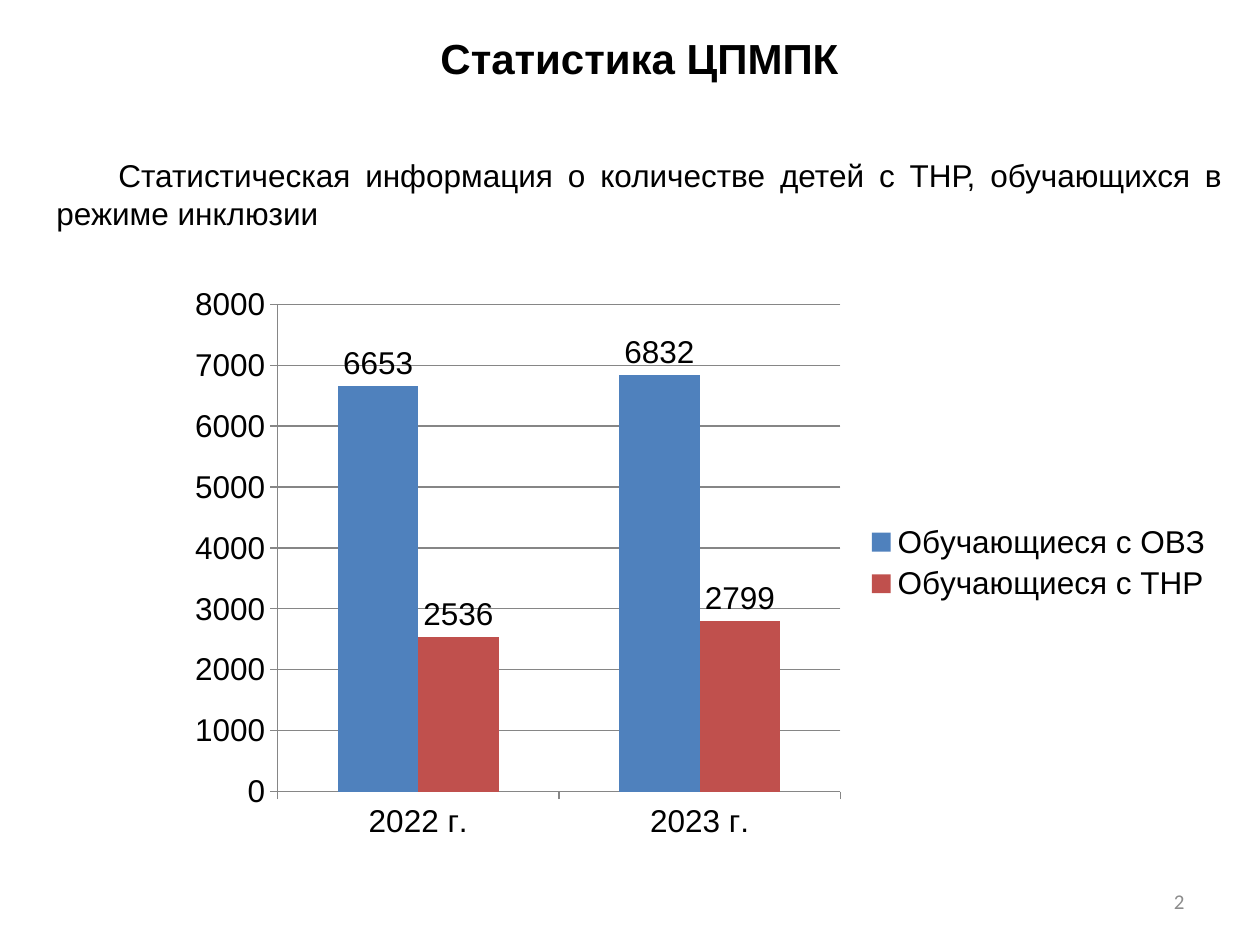
"""Build the slide with inclusion statistics and a clustered column chart."""
from pptx import Presentation
from pptx.chart.data import CategoryChartData
from pptx.dml.color import RGBColor
from pptx.enum.chart import XL_CHART_TYPE, XL_LABEL_POSITION, XL_LEGEND_POSITION, XL_TICK_MARK
from pptx.enum.text import MSO_ANCHOR, PP_ALIGN
from pptx.util import Emu, Pt

PX = 914400 // 126
BLACK = RGBColor(0x00, 0x00, 0x00)
GRAY = RGBColor(0x8C, 0x8C, 0x8C)
LINE_GRAY = RGBColor(0x86, 0x86, 0x86)
BLUE = RGBColor(0x4F, 0x81, 0xBD)
RED = RGBColor(0xC0, 0x50, 0x4D)
TOP, MIDDLE = MSO_ANCHOR.TOP, MSO_ANCHOR.MIDDLE
JUSTIFY, CENTER, RIGHT = PP_ALIGN.JUSTIFY, PP_ALIGN.CENTER, PP_ALIGN.RIGHT
COLUMNS = XL_CHART_TYPE.COLUMN_CLUSTERED
LEGEND_RIGHT = XL_LEGEND_POSITION.RIGHT
OUTSIDE_END = XL_LABEL_POSITION.OUTSIDE_END
TICK_OUT = XL_TICK_MARK.OUTSIDE

SLIDE_SIZE = (1260, 945)
TEXTS = [
    dict(text="Статистическая информация о количестве детей с ТНР, обучающихся в режиме инклюзии",
         at=(44, 150, 1191, 89), align=JUSTIFY, anchor=TOP, indent=62,
         font="Arial", size=18, color=BLACK, bold=False),
    dict(text="Статистика ЦПМПК",
         at=(44, 26, 1191, 63), align=CENTER, anchor=TOP, indent=0,
         font="Arial", size=24, color=BLACK, bold=True),
    dict(text="2",
         at=(903, 876, 294, 50), align=RIGHT, anchor=MIDDLE, indent=0,
         font="Calibri", size=12, color=GRAY, bold=False),
]
CHART_AT = (174, 275, 1052, 576)
YEARS = ["2022 г.", "2023 г."]
SERIES = [
    ("Обучающиеся с ОВЗ", (6653, 6832), BLUE),
    ("Обучающиеся с ТНР", (2536, 2799), RED),
]


def px(*lengths):
    return [Emu(length * PX) for length in lengths]


def style_font(font, name, size, color, bold=False):
    font.name, font.size, font.bold = name, Pt(size), bold
    font.color.rgb = color


def add_text(slide, item):
    frame = slide.shapes.add_textbox(*px(*item["at"])).text_frame
    frame.word_wrap = True
    frame.vertical_anchor = item["anchor"]
    para = frame.paragraphs[0]
    para.alignment = item["align"]
    if item["indent"]:
        para._p.get_or_add_pPr().set("indent", str(item["indent"] * PX))
    span = para.add_run()
    span.text = item["text"]
    style_font(span.font, item["font"], item["size"], item["color"], item["bold"])


def add_column_chart(slide):
    data = CategoryChartData()
    data.categories = YEARS
    for name, values, _ in SERIES:
        data.add_series(name, values)
    chart = slide.shapes.add_chart(COLUMNS, *px(*CHART_AT), data).chart
    style_font(chart.font, "Arial", 18, BLACK)
    chart.has_title = False
    chart.has_legend = True
    chart.legend.position = LEGEND_RIGHT
    chart.legend.include_in_layout = False

    chart.value_axis.has_major_gridlines = True
    gridlines = chart.value_axis.major_gridlines
    for axis in (chart.category_axis, chart.value_axis):
        axis.major_tick_mark = TICK_OUT
    for part in (chart.category_axis, chart.value_axis, gridlines):
        part.format.line.color.rgb = LINE_GRAY
        part.format.line.width = Pt(0.75)

    plot = chart.plots[0]
    plot.gap_width, plot.overlap = 150, 0
    plot.vary_by_categories = False
    for series, (_, _, color) in zip(plot.series, SERIES):
        series.format.fill.solid()
        series.format.fill.fore_color.rgb = color
        labels = series.data_labels
        labels.show_value = True
        labels.position = OUTSIDE_END


def main():
    deck = Presentation()
    deck.slide_width, deck.slide_height = px(*SLIDE_SIZE)
    slide = deck.slides.add_slide(deck.slide_layouts[6])
    *body, page_number = TEXTS
    for item in body:
        add_text(slide, item)
    add_column_chart(slide)
    add_text(slide, page_number)
    deck.save("out.pptx")


if __name__ == "__main__":
    main()
